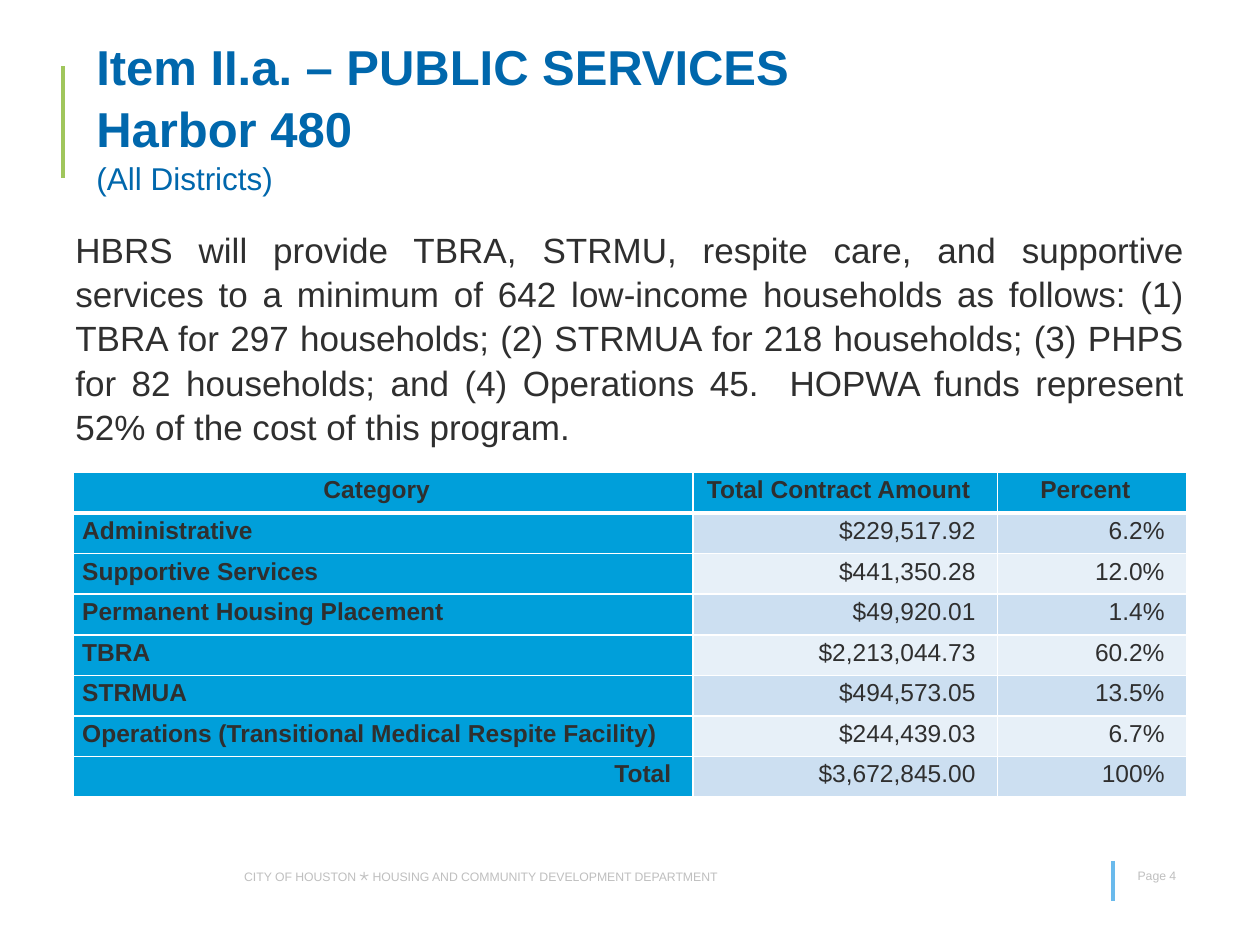
"""Build the Harbor 480 public services slide."""
from lxml import etree
from pptx import Presentation
from pptx import util as u
from pptx.dml import color
from pptx.enum import shapes, text
from pptx.oxml import ns

FONT = "Arial"
BLUE, INK, GREY, WHITE = "0067AC", "2F2F2F", "BFBFBF", "FFFFFF"
HEADER, BANDS = "009FDA", ("E7F0F8", "CCDFF1")
LEFT, CENTER, RIGHT = text.PP_ALIGN.LEFT, text.PP_ALIGN.CENTER, text.PP_ALIGN.RIGHT
WIDTHS = (354, 174, 108)
ROW_HEIGHT = 23.2
ROWS = (
    ("Category", "Total Contract Amount", "Percent"),
    ("Administrative", "$229,517.92", "6.2%"),
    ("Supportive Services", "$441,350.28", "12.0%"),
    ("Permanent Housing Placement", "$49,920.01", "1.4%"),
    ("TBRA", "$2,213,044.73", "60.2%"),
    ("STRMUA", "$494,573.05", "13.5%"),
    ("Operations (Transitional Medical Respite Facility)", "$244,439.03", "6.7%"),
    ("Total", "$3,672,845.00", "100%"),
)
BODY = (
    "HBRS will provide TBRA, STRMU, respite care, and supportive services to a "
    "minimum of 642 low-income households as follows: (1) TBRA for 297 households; "
    "(2) STRMUA for 218 households; (3) PHPS for 82 households; and (4) Operations 45.  "
    "HOPWA funds represent 52% of the cost of this program."
)


def rgb(value):
    """Turn a hex string into a colour."""
    return color.RGBColor.from_string(value)


def add_span(para, words, size, tint, bold=False):
    """Add one formatted run to a paragraph."""
    span = para.add_run()
    span.text = words
    span.font.name, span.font.size, span.font.bold = FONT, u.Pt(size), bold
    span.font.color.rgb = rgb(tint)


def add_text(page, place, lines, tint, align=LEFT, spacing=1.0,
             anchor=text.MSO_ANCHOR.TOP):
    """Add a text box whose lines of runs are parted by line breaks."""
    box = page.shapes.add_textbox(*map(u.Pt, place))
    frame = box.text_frame
    frame.word_wrap, frame.vertical_anchor = True, anchor
    para = frame.paragraphs[0]
    para.alignment, para.line_spacing = align, spacing
    for number, line in enumerate(lines):
        if number:
            para.add_line_break()
        for words, size, bold in line:
            add_span(para, words, size, tint, bold)


def add_rule(page, x, top, bottom, tint):
    """Add a vertical accent line."""
    rule = page.shapes.add_connector(
        shapes.MSO_CONNECTOR.STRAIGHT, *map(u.Pt, (x, top, x, bottom)))
    rule.line.color.rgb, rule.line.width = rgb(tint), u.Pt(2.25)
    etree.SubElement(rule._element.spPr, ns.qn("a:effectLst"))


def set_borders(cell, widths):
    """Draw white borders of the given widths, keyed by side."""
    properties = cell._tc.get_or_add_tcPr()
    for index, (side, width) in enumerate(widths.items()):
        line = etree.Element(ns.qn(f"a:ln{side}"), w=str(u.Pt(width)))
        fill = etree.SubElement(line, ns.qn("a:solidFill"))
        etree.SubElement(fill, ns.qn("a:srgbClr"), val=WHITE)
        properties.insert(index, line)


def fill_cell(cell, words, row, column):
    """Write and style a cell according to its place in the table."""
    is_header, is_label = row == 0, column == 0
    cell.margin_left, cell.margin_right = u.Pt(5), u.Pt(12.5)
    cell.margin_top = cell.margin_bottom = u.Pt(0)
    cell.fill.solid()
    cell.fill.fore_color.rgb = rgb(HEADER if is_header or is_label else BANDS[row % 2])
    para = cell.text_frame.paragraphs[0]
    para.line_spacing = 1.15
    if is_header:
        para.alignment = CENTER
    else:
        para.alignment = LEFT if is_label and words != "Total" else RIGHT
    add_span(para, words, 14, INK, is_header or is_label)
    set_borders(cell, {"L": 1, "R": 1, "T": 3 if row == 1 else 1,
                       "B": 3 if is_header else 1})


def add_budget(page, left, top):
    """Add the contract budget table."""
    frame = page.shapes.add_table(
        len(ROWS), len(WIDTHS), u.Pt(left), u.Pt(top),
        u.Pt(sum(WIDTHS)), u.Pt(ROW_HEIGHT * len(ROWS)))
    table = frame.table
    for column, width in zip(table.columns, WIDTHS):
        column.width = u.Pt(width)
    for row, values in enumerate(ROWS):
        table.rows[row].height = u.Pt(ROW_HEIGHT)
        for column, words in enumerate(values):
            fill_cell(table.cell(row, column), words, row, column)


def main():
    """Build and save the slide."""
    deck = Presentation()
    deck.slide_width, deck.slide_height = u.Pt(720), u.Pt(540)
    page = deck.slides.add_slide(deck.slide_layouts[6])
    footer = [("CITY OF HOUSTON ", 7, False), ("⋆", 10, False),
              (" HOUSING AND COMMUNITY DEVELOPMENT DEPARTMENT", 7, False)]
    add_text(page, (132.5, 490.3, 294, 19.5), [footer], GREY)
    add_rule(page, 636, 492, 515, "6ABAEC")
    add_rule(page, 36, 38, 102, "A0C65C")
    add_text(page, (643, 492.5, 50, 22), [[("Page 4", 7, False)]], GREY)
    title = [[("Item II.a. – PUBLIC SERVICES", 28, True)],
             [("Harbor 480", 28, True)], [("(All Districts)", 18, False)]]
    add_text(page, (48, 18, 660, 96), title, BLUE, spacing=1.05,
             anchor=text.MSO_ANCHOR.MIDDLE)
    add_text(page, (36, 126, 648, 128), [[(BODY, 20, False)]], INK,
             align=text.PP_ALIGN.JUSTIFY, spacing=1.05)
    add_budget(page, 42, 270)
    deck.save("out.pptx")


if __name__ == "__main__":
    main()
